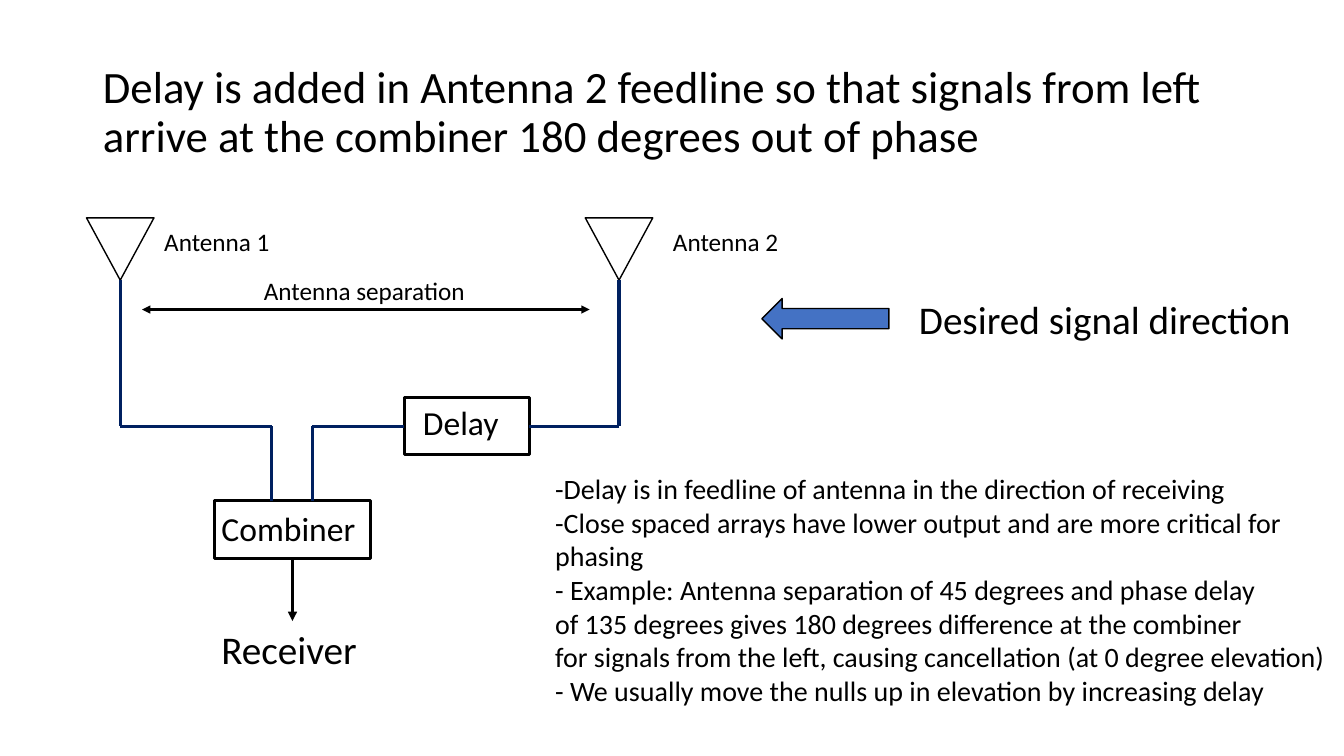
from dataclasses import dataclass
from typing import Any, Optional

from lxml.etree import SubElement
from pptx import Presentation
from pptx.dml.color import RGBColor
from pptx.enum.shapes import MSO_CONNECTOR, MSO_SHAPE
from pptx.enum.text import MSO_ANCHOR, MSO_AUTO_SIZE, PP_ALIGN
from pptx.oxml.ns import qn
from pptx.util import Cm, Pt


@dataclass(frozen=True)
class Theme:
    font: str = "Calibri"
    ink: RGBColor = RGBColor(0x00, 0x00, 0x00)
    feedline: RGBColor = RGBColor(0x00, 0x20, 0x60)
    signal: RGBColor = RGBColor(0x44, 0x72, 0xC4)
    title: int = 32
    heading: int = 28
    block: int = 24
    notes: int = 20
    label: int = 18
    thin: float = 1
    medium: float = 1.5
    thick: float = 2.25


THEME = Theme()


@dataclass(frozen=True)
class Box:
    left: float
    top: float
    width: float
    height: float


@dataclass(frozen=True)
class Label:
    text: str
    box: Box
    size: int
    wrap: bool = False


@dataclass(frozen=True)
class Outline:
    kind: MSO_SHAPE
    box: Box
    weight: float
    rotation: int = 0
    fill: Optional[RGBColor] = None


@dataclass(frozen=True)
class Wire:
    start: tuple[float, float]
    end: tuple[float, float]
    color: RGBColor = THEME.feedline
    weight: float = THEME.thick
    arrows: tuple[str, ...] = ()


def apply(target: Any, values: dict[str, Any]) -> None:
    for name, value in values.items():
        setattr(target, name, value)


def place(shape: Any, box: Box) -> None:
    apply(shape, {"left": Cm(box.left), "top": Cm(box.top),
                  "width": Cm(box.width), "height": Cm(box.height)})


def write(frame: Any, text: str, size: int, paragraph_format: dict[str, Any]) -> None:
    frame.text = text
    for paragraph in frame.paragraphs:
        apply(paragraph, {"alignment": PP_ALIGN.LEFT, **paragraph_format})
        for run in paragraph.runs:
            apply(run.font, {"name": THEME.font, "size": Pt(size)})
            run.font.color.rgb = THEME.ink


def add_label(slide: Any, label: Label) -> None:
    box = label.box
    textbox = slide.shapes.add_textbox(
        Cm(box.left), Cm(box.top), Cm(box.width), Cm(box.height))
    apply(textbox.text_frame, {"word_wrap": label.wrap,
                               "auto_size": MSO_AUTO_SIZE.SHAPE_TO_FIT_TEXT})
    write(textbox.text_frame, label.text, label.size, {})


def add_outline(slide: Any, outline: Outline) -> Any:
    box = outline.box
    shape = slide.shapes.add_shape(
        outline.kind, Cm(box.left), Cm(box.top), Cm(box.width), Cm(box.height))
    shape.rotation = outline.rotation
    shape.shadow.inherit = False
    if outline.fill is None:
        shape.fill.background()
    else:
        shape.fill.solid()
        shape.fill.fore_color.rgb = outline.fill
    shape.line.color.rgb = THEME.ink
    shape.line.width = Pt(outline.weight)
    return shape


def add_wire(slide: Any, wire: Wire) -> Any:
    connector = slide.shapes.add_connector(
        MSO_CONNECTOR.STRAIGHT, *(Cm(value) for value in wire.start + wire.end))
    connector.line.color.rgb = wire.color
    connector.line.width = Pt(wire.weight)
    line_xml = connector.line._get_or_add_ln()
    for arrow in wire.arrows:
        SubElement(line_xml, qn(f"a:{arrow}"), type="triangle")
    SubElement(connector._element.spPr, qn("a:effectLst"))
    return connector


# Shared diagram measures, in centimetres
ANTENNA_WIDTH, ANTENNA_TOP, ANTENNA_HEIGHT = 1.7, 5.49, 1.57
MAST_TOP = ANTENNA_TOP + ANTENNA_HEIGHT
MASTS = (3.03, 15.6)
LABEL_LEFTS = (3.89, 16.71)
FEED_Y = 10.74
COMBINER_INPUTS = (6.85, 7.87)
DELAY = Box(10.19, FEED_Y - 0.72, 3.15, 1.44)
COMBINER = Box(5.41, 12.62, 3.92, 1.46)
COMBINER_MIDDLE = COMBINER.left + COMBINER.width / 2

NOTES = "\n".join((
    "-Delay is in feedline of antenna in the direction of receiving",
    "-Close spaced arrays have lower output and are more critical for",
    "phasing",
    "- Example: Antenna separation of 45 degrees and phase delay",
    "of 135 degrees gives 180 degrees difference at the combiner",
    "for signals from the left, causing cancellation (at 0 degree elevation)",
    "- We usually move the nulls up in elevation by increasing delay",
))

LABELS = (
    Label("Desired signal direction", Box(22.91, 7.32, 9.98, 1.45), THEME.heading),
    Label("Combiner", Box(5.33, 12.67, 3.91, 1.27), THEME.block),
    Label("Delay", Box(10.41, 10.01, 2.44, 1.27), THEME.block),
    Label("Receiver", Box(5.33, 15.62, 4.42, 1.45), THEME.heading, wrap=True),
    Label("Antenna separation", Box(6.4, 6.81, 5.64, 1.02), THEME.label),
    Label(NOTES, Box(13.74, 11.76, 20.12, 7.09), THEME.notes),
)


def main() -> None:
    deck = Presentation()
    apply(deck, {"slide_width": Cm(33.87), "slide_height": Cm(19.05)})
    slide = deck.slides.add_slide(deck.slide_layouts[5])

    # Title
    title = slide.shapes.title
    place(title, Box(2.34, 1.02, 29.21, 3.68))
    apply(title.text_frame, {"word_wrap": True, "auto_size": MSO_AUTO_SIZE.NONE,
                             "vertical_anchor": MSO_ANCHOR.MIDDLE})
    write(title.text_frame,
          "Delay is added in Antenna 2 feedline so that signals from left "
          "arrive at the combiner 180 degrees out of phase",
          THEME.title, {"line_spacing": 0.9})

    # Signal direction
    add_outline(slide, Outline(MSO_SHAPE.RIGHT_ARROW, Box(19.2, 7.52, 3.2, 1.02),
                               THEME.thin, 180, THEME.signal))

    # Antennas with their masts
    for number, (mast, label_left) in enumerate(zip(MASTS, LABEL_LEFTS), start=1):
        antenna = Box(mast - ANTENNA_WIDTH / 2, ANTENNA_TOP,
                      ANTENNA_WIDTH, ANTENNA_HEIGHT)
        add_outline(slide, Outline(MSO_SHAPE.ISOSCELES_TRIANGLE, antenna,
                                   THEME.thin, 180))
        add_wire(slide, Wire((mast, MAST_TOP), (mast, FEED_Y)))
        add_label(slide, Label(f"Antenna {number}",
                               Box(label_left, 5.59, 3.2, 1.02), THEME.label))

    # Delay and combiner blocks
    delay, combiner = (add_outline(slide, Outline(MSO_SHAPE.RECTANGLE, box, THEME.thick))
                       for box in (DELAY, COMBINER))

    # Feedlines into the combiner
    direct_input, delayed_input = COMBINER_INPUTS
    add_wire(slide, Wire((MASTS[0], FEED_Y), (direct_input, FEED_Y)))
    for feed_x in COMBINER_INPUTS:
        add_wire(slide, Wire((feed_x, FEED_Y), (feed_x, COMBINER.top)))
    delay_in = add_wire(slide, Wire((MASTS[1], FEED_Y),
                                    (DELAY.left + DELAY.width, FEED_Y)))
    delay_in.end_connect(delay, 3)
    delay_out = add_wire(slide, Wire((DELAY.left, FEED_Y), (delayed_input, FEED_Y)))
    delay_out.begin_connect(delay, 1)

    # Receiver output and separation arrow
    output = add_wire(slide, Wire((COMBINER_MIDDLE, COMBINER.top + COMBINER.height),
                                  (COMBINER_MIDDLE, 15.65), THEME.ink,
                                  arrows=("tailEnd",)))
    output.begin_connect(combiner, 2)
    add_wire(slide, Wire((3.58, 7.8), (14.86, 7.8), THEME.ink, THEME.medium,
                         ("headEnd", "tailEnd")))

    # Labels and notes
    for label in LABELS:
        add_label(slide, label)

    deck.save("out.pptx")


if __name__ == "__main__":
    main()
